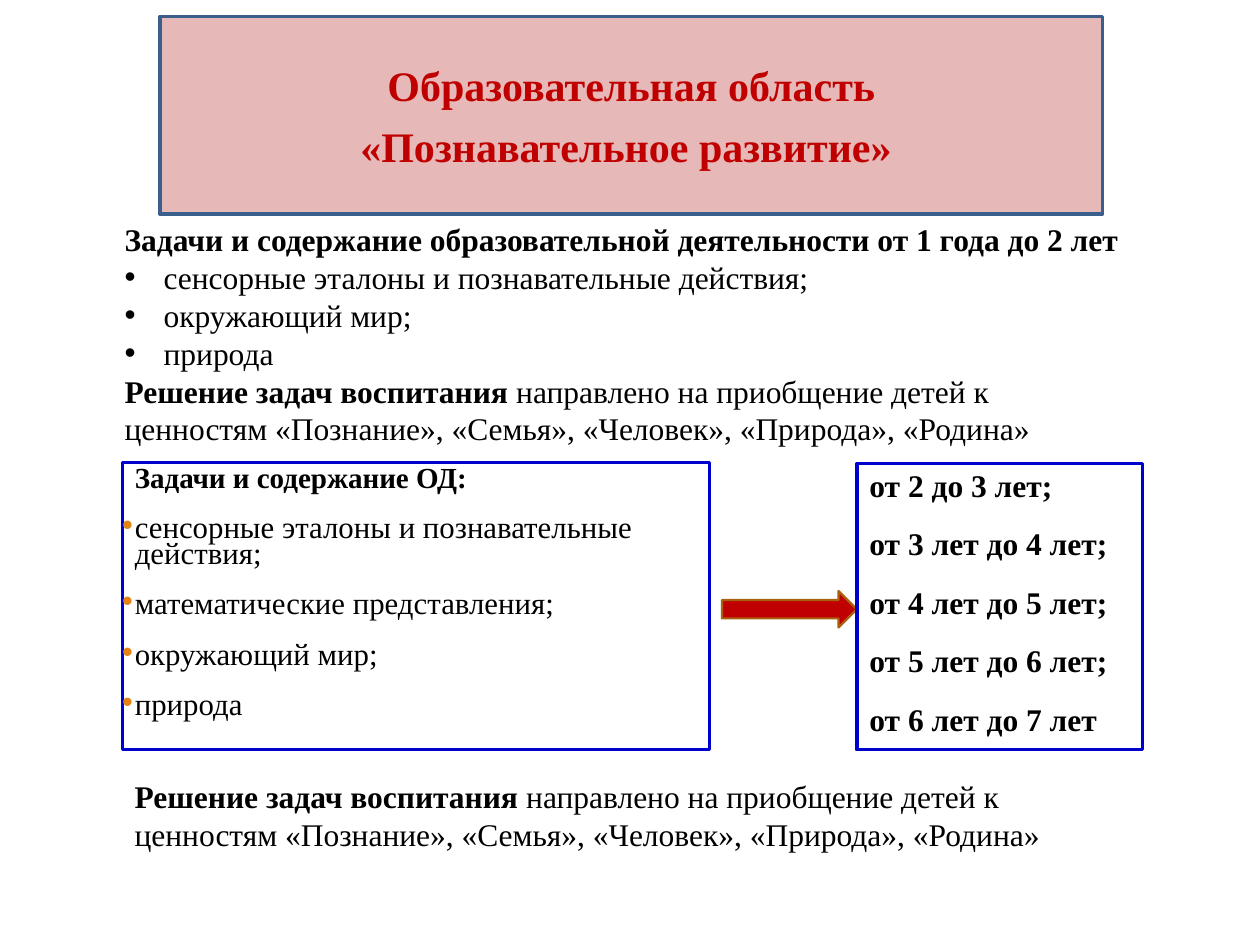
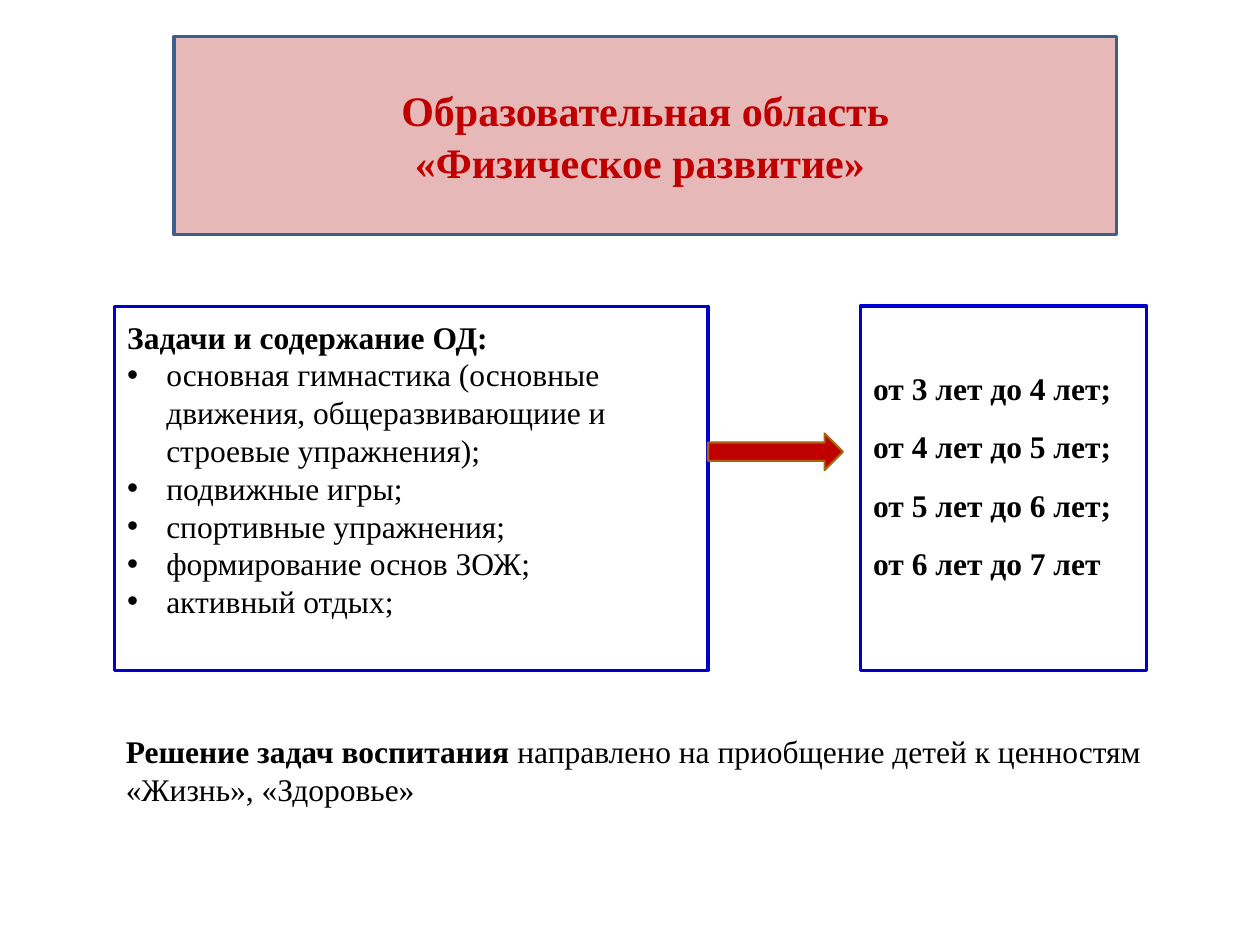
from dataclasses import dataclass

import pptx
import pptx.dml.color
import pptx.enum.shapes
import pptx.enum.text
import pptx.oxml
import pptx.oxml.ns
import pptx.util

Inches = pptx.util.Inches
Pt = pptx.util.Pt
SHAPE = pptx.enum.shapes.MSO_SHAPE
ALIGN = pptx.enum.text.PP_ALIGN
ANCHOR = pptx.enum.text.MSO_ANCHOR

FONT = "Times New Roman"
COLORS = {
    "scroll": "E6B9B8",
    "scroll_line": "3A5F8C",
    "accent": "C00000",
    "arrow_line": "A9610D",
    "frame": "0000CC",
    "bullet": "E48312",
    "text": "000000",
}
AREA = "Образовательная область"
TASKS = "Задачи и содержание ОД:"
VALUES = "Решение задач воспитания "
AIM = "направлено на приобщение детей к ценностям "
FAMILY_VALUES = AIM + "«Познание», «Семья», «Человек», «Природа», «Родина»"


@dataclass
class Box:
    left: float
    top: float
    width: float
    height: float

    def lengths(self) -> list:
        return [Inches(v) for v in (self.left, self.top, self.width, self.height)]


@dataclass
class Para:
    lead: str = ""
    rest: str = ""
    bullet: bool = False
    size: float = 18


@dataclass
class Style:
    text_left: float = 0
    hang: float = 0.31
    line: float = 1
    before: float = 0
    after: float = 0
    bullet_color: str = "text"
    side: float = 0.1
    top: float = 0.05


PLAIN = Style()


def rgb(name: str) -> pptx.dml.color.RGBColor:
    return pptx.dml.color.RGBColor.from_string(COLORS[name])


def place(sp, box: Box) -> None:
    sp.left, sp.top, sp.width, sp.height = box.lengths()


def outline(sp, color: str, width: float) -> None:
    sp.line.color.rgb = rgb(color)
    sp.line.width = Pt(width)


def format_run(r, size: float, color: str, bold: bool) -> None:
    r.font.name = FONT
    r.font.size = Pt(size)
    r.font.bold = bold
    r.font.color.rgb = rgb(color)


def set_bullet(p, left: float, hang: float, color: str, shown: bool) -> None:
    pPr = p._p.get_or_add_pPr()
    pPr.set("marL", str(Inches(left)))
    pPr.set("indent", str(-Inches(hang)))
    ns = pptx.oxml.ns.nsdecls("a")
    if shown:
        parts = [
            f'<a:buClr {ns}><a:srgbClr val="{COLORS[color]}"/></a:buClr>',
            f'<a:buFont {ns} typeface="Arial"/>',
            f'<a:buChar {ns} char="•"/>',
        ]
    else:
        parts = [f"<a:buNone {ns}/>"]
    for part in parts:
        pPr.append(pptx.oxml.parse_xml(part))


def write(sp, paras: list[Para], style: Style = PLAIN) -> None:
    tf = sp.text_frame
    tf.word_wrap = True
    tf.auto_size = pptx.enum.text.MSO_AUTO_SIZE.NONE
    tf.vertical_anchor = ANCHOR.TOP
    tf.margin_left = tf.margin_right = Inches(style.side)
    tf.margin_top, tf.margin_bottom = Inches(style.top), Inches(0.05)
    for i, para in enumerate(paras):
        p = tf.add_paragraph() if i else tf.paragraphs[0]
        p.alignment = ALIGN.LEFT
        p.line_spacing = style.line
        p.space_before = Pt(style.before if i else 0)
        p.space_after = Pt(style.after)
        left = style.hang if para.bullet else style.text_left
        hang = style.hang if para.bullet else 0
        set_bullet(p, left, hang, style.bullet_color, para.bullet)
        for text, bold in ((para.lead, True), (para.rest, False)):
            if text:
                r = p.add_run()
                r.text = text
                format_run(r, para.size, "text", bold)


def add_title(slide, left: float, top: float, lines: list[str], gap: float) -> None:
    sp = slide.shapes.title
    place(sp, Box(left, top, 7.48, 1.57))
    sp._element.spPr.append(pptx.oxml.parse_xml(
        f'<a:prstGeom {pptx.oxml.ns.nsdecls("a")} prst="horizontalScroll"><a:avLst/></a:prstGeom>'))
    sp.fill.solid()
    sp.fill.fore_color.rgb = rgb("scroll")
    outline(sp, "scroll_line", 2)
    tf = sp.text_frame
    tf.text = "\n".join(lines)
    tf.auto_size = pptx.enum.text.MSO_AUTO_SIZE.NONE
    tf.vertical_anchor = ANCHOR.MIDDLE
    for i, p in enumerate(tf.paragraphs):
        p.alignment = ALIGN.CENTER
        p.space_before = Pt(gap if i else 0)
        format_run(p.runs[0], 24, "accent", True)


def add_text(slide, box: Box, paras: list[Para]) -> None:
    write(slide.shapes.add_textbox(*box.lengths()), paras)


def add_tasks(slide, box: Box, paras: list[Para], style: Style) -> None:
    sp = slide.placeholders[1]
    place(sp, box)
    outline(sp, "frame", 1.75)
    write(sp, paras, style)


def add_ages(slide, box: Box, ages: list[str], top: float) -> None:
    sp = slide.shapes.add_shape(SHAPE.RECTANGLE, *box.lengths())
    sp.shadow.inherit = False
    sp.fill.background()
    outline(sp, "frame", 2)
    style = Style(text_left=0.1, line=0.9, before=12, after=2, side=0, top=top)
    write(sp, [Para(age) for age in ages], style)


def add_arrow(slide, left: float, top: float) -> None:
    sp = slide.shapes.add_shape(SHAPE.RIGHT_ARROW, *Box(left, top, 1.07, 0.29).lengths())
    sp.shadow.inherit = False
    sp.fill.solid()
    sp.fill.fore_color.rgb = rgb("accent")
    outline(sp, "arrow_line", 1.25)


def bullets(items: list[str], size: float = 18) -> list[Para]:
    return [Para(rest=item, bullet=True, size=size) for item in items]


def build_cognitive(slide, ages: list[str]) -> None:
    senses = "сенсорные эталоны и познавательные действия;"
    world = ["окружающий мир;", "природа"]
    values = Para(VALUES, FAMILY_VALUES)
    add_title(slide, 1.27, 0.13, [AREA, "«Познавательное развитие» "], 6)
    add_text(slide, Box(0.89, 1.7, 8.19, 1.9), [
        Para("Задачи и содержание образовательной деятельности от 1 года до 2 лет"),
        *bullets([senses, *world]),
        values,
    ])
    tight = Style(text_left=0.1, hang=0.1, line=0.7, before=12, after=2,
                  bullet_color="bullet", side=0)
    add_tasks(slide, Box(0.97, 3.67, 4.66, 2.28), [
        Para(TASKS, size=16.6),
        *bullets([senses, "математические представления;", *world], 17.6),
    ], tight)
    add_arrow(slide, 5.73, 4.69)
    add_ages(slide, Box(6.8, 3.68, 2.27, 2.27), ["от 2 до 3 лет;", *ages], 0.05)
    add_text(slide, Box(0.97, 6.12, 8.1, 0.71), [values])


def build_physical(slide, ages: list[str]) -> None:
    add_title(slide, 1.38, 0.29, [AREA, "«Физическое развитие» "], 1)
    add_tasks(slide, Box(0.91, 2.43, 4.71, 2.89), [
        Para(TASKS),
        *bullets([
            "основная гимнастика (основные движения, общеразвивающиие и строевые упражнения);",
            "подвижные игры;",
            "спортивные упражнения;",
            "формирование основ ЗОЖ;",
            "активный отдых;",
        ]),
    ], Style(top=0.09))
    add_arrow(slide, 5.62, 3.44)
    add_ages(slide, Box(6.83, 2.43, 2.27, 2.89), ages, 0.53)
    add_text(slide, Box(0.9, 5.76, 8.34, 0.71),
             [Para(VALUES, AIM + "«Жизнь», «Здоровье»")])


def main() -> None:
    prs = pptx.Presentation()
    prs.slide_width, prs.slide_height = Inches(10), Inches(7.5)
    ages = [f"от {n} лет до {n + 1} лет" + (";" if n < 6 else "") for n in range(3, 7)]
    for build in (build_cognitive, build_physical):
        build(prs.slides.add_slide(prs.slide_layouts[1]), ages)
    prs.save("out.pptx")


if __name__ == "__main__":
    main()
